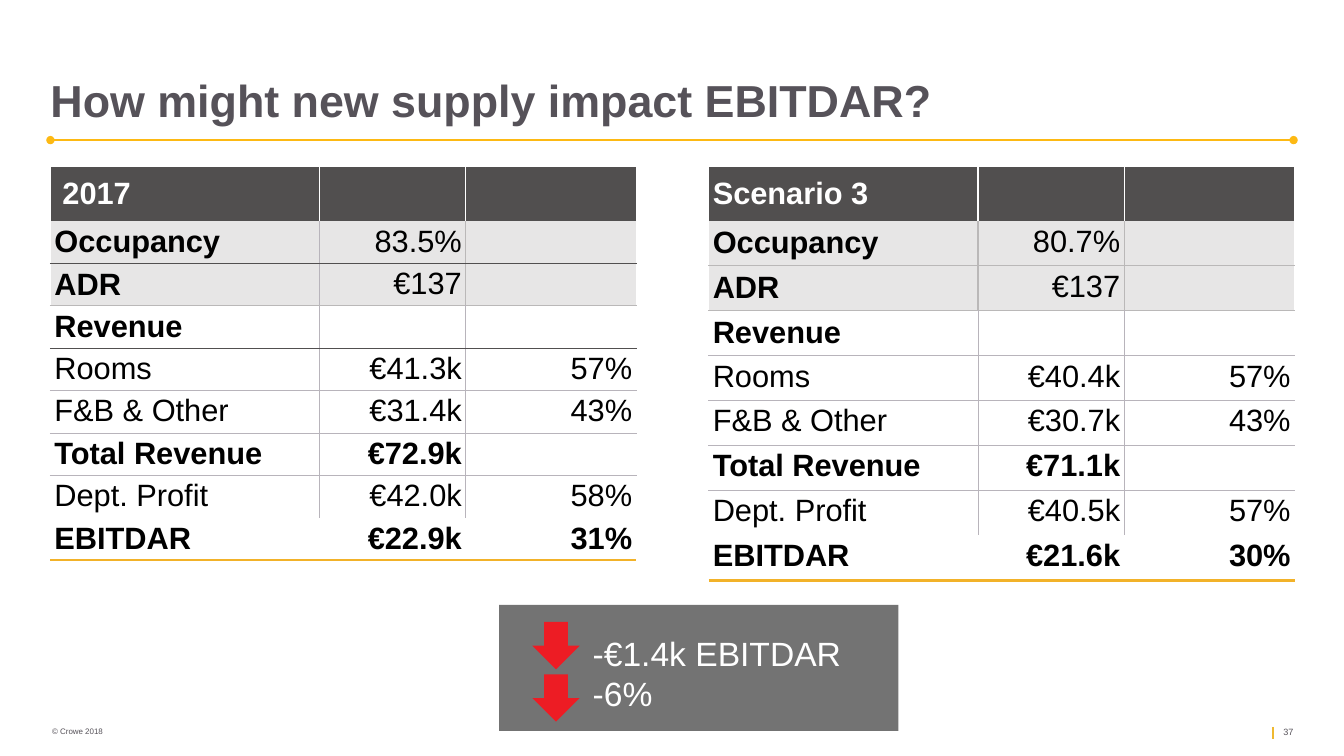
from dataclasses import dataclass

from lxml import etree
from pptx import Presentation
from pptx.dml.color import RGBColor
from pptx.enum.shapes import MSO_CONNECTOR, MSO_SHAPE
from pptx.enum.text import MSO_ANCHOR, MSO_AUTO_SIZE, PP_ALIGN
from pptx.oxml.ns import qn
from pptx.util import Inches, Pt

TITLE = "How might new supply impact EBITDAR?"
LABELS = ["Occupancy", "ADR", "Revenue", "Rooms", "F&B & Other",
          "Total Revenue", "Dept. Profit", "EBITDAR"]
BOLD_LABELS = {"Occupancy", "ADR", "Revenue", "Total Revenue", "EBITDAR"}
BOLD_VALUES = {"Total Revenue", "EBITDAR"}
YEAR_2017 = {
    "heading": "2017", "indent": 0.12, "left": 0.5, "height": 3.91,
    "values": ["83.5%", "€137", "", "€41.3k", "€31.4k", "€72.9k", "€42.0k", "€22.9k"],
    "shares": ["", "", "", "57%", "43%", "", "58%", "31%"],
    "rules": ["none", "dark", "grey", "dark", "pale", "pale", "pale", "none", "amber"],
}
SCENARIO_3 = {
    "heading": "Scenario 3", "indent": 0.04, "left": 7.03, "height": 4.11,
    "values": ["80.7%", "€137", "", "€40.4k", "€30.7k", "€71.1k", "€40.5k", "€21.6k"],
    "shares": ["", "", "", "57%", "43%", "", "57%", "30%"],
    "rules": ["none", "grey", "grey", "pale", "pale", "pale", "pale", "none", "amber"],
}
IMPACT = ["-€1.4k EBITDAR", "-6%"]
COPYRIGHT = "© Crowe 2018"
PAGE = "37"

SLIDE_W, SLIDE_H = 13.33, 7.5
MARGIN = 0.5
TABLE_TOP, HEADER_H = 1.65, 0.54
COLUMNS = [2.67, 1.45, 1.69]
SHADED_ROWS = 2
MIDDLE_ROWS = 3
CELL_PAD_X, CELL_PAD_Y = Inches(0.04), Pt(2.5)
ARROW_SIZE, ARROW_TOP, ARROW_STEP = 0.47, 6.17, 0.52

LEFT, RIGHT = PP_ALIGN.LEFT, PP_ALIGN.RIGHT
TOP, MIDDLE = MSO_ANCHOR.TOP, MSO_ANCHOR.MIDDLE
NO_AUTOFIT = MSO_AUTO_SIZE.NONE
STRAIGHT = MSO_CONNECTOR.STRAIGHT
RECTANGLE, DOWN_ARROW = MSO_SHAPE.RECTANGLE, MSO_SHAPE.DOWN_ARROW


@dataclass(frozen=True)
class Theme:
    font: str = "Arial"
    slate: str = "565259"
    header: str = "514F4F"
    shaded: str = "E7E6E6"
    panel: str = "737373"
    red: str = "ED1C24"
    gold: str = "FDB913"
    tick: str = "EFB931"
    white: str = "FFFFFF"
    black: str = "000000"
    title_size: float = 32
    table_size: float = 22
    impact_size: float = 24
    page_size: float = 6.5
    copyright_size: float = 5.7


THEME = Theme()
BORDERS = {"none": None, "white": (THEME.white, 1), "grey": ("BAB8B8", 1),
           "pale": ("B8B4BB", 0.5), "dark": (THEME.header, 0.25),
           "amber": ("F2B229", 2.25)}


def rgb(value):
    return RGBColor.from_string(value)


def write(paragraph, text, size, color, bold=False):
    run = paragraph.add_run()
    run.text = text
    font = run.font
    font.name, font.size, font.bold = THEME.font, Pt(size), bold
    font.color.rgb = rgb(color)


def add_text(slide, box, lines, size, color, anchor=MIDDLE):
    frame = slide.shapes.add_textbox(*map(Inches, box)).text_frame
    frame.word_wrap = True
    frame.vertical_anchor = anchor
    for index, line in enumerate(lines):
        paragraph = frame.add_paragraph() if index else frame.paragraphs[0]
        write(paragraph, line, size, color)


def add_block(slide, kind, box, color):
    block = slide.shapes.add_shape(kind, *map(Inches, box))
    block.shadow.inherit = False
    block.fill.solid()
    block.fill.fore_color.rgb = rgb(color)
    block.line.fill.background()


def add_rule(slide, start, end, color, width, dotted=False):
    rule = slide.shapes.add_connector(STRAIGHT, *map(Inches, start + end))
    rule.line.color.rgb = rgb(color)
    rule.line.width = Pt(width)
    properties = rule._element.spPr
    if dotted:
        outline = properties.find(qn("a:ln"))
        for tip in ("a:headEnd", "a:tailEnd"):
            etree.SubElement(outline, qn(tip), type="oval")
    etree.SubElement(properties, qn("a:effectLst"))


def set_borders(cell, sides):
    properties = cell._tc.get_or_add_tcPr()
    for side, style in zip("LRTB", sides):
        border = BORDERS[style]
        line = etree.SubElement(properties, qn(f"a:ln{side}"))
        if border is None:
            etree.SubElement(line, qn("a:noFill"))
            continue
        color, width = border
        line.set("w", str(int(Pt(width))))
        fill = etree.SubElement(line, qn("a:solidFill"))
        etree.SubElement(fill, qn("a:srgbClr"), val=color)


def vertical_rules(row, last, data):
    if row == 0:
        return ["white"] * 4
    if row == last:
        return ["none"] * 4
    if row <= SHADED_ROWS:
        first = "pale" if data is YEAR_2017 else "grey"
        return ["white", first, "grey", "white"]
    return ["white", "pale", "pale", "white"]


def add_results(slide, data):
    rows = [(data["heading"], "", "")]
    rows += list(zip(LABELS, data["values"], data["shares"]))
    last = len(rows) - 1
    table = slide.shapes.add_table(
        len(rows), len(COLUMNS), Inches(data["left"]), Inches(TABLE_TOP),
        Inches(sum(COLUMNS)), Inches(data["height"])).table
    table.first_row = table.horz_banding = False
    for column, width in zip(table.columns, COLUMNS):
        column.width = Inches(width)
    horizontal = ["white"] + data["rules"]
    for r, texts in enumerate(rows):
        heading = r == 0
        table.rows[r].height = Inches(
            HEADER_H if heading else (data["height"] - HEADER_H) / last)
        vertical = vertical_rules(r, last, data)
        fill = THEME.header if heading else THEME.shaded if r <= SHADED_ROWS else THEME.white
        for c, text in enumerate(texts):
            cell = table.cell(r, c)
            set_borders(cell, vertical[c:c + 2] + horizontal[r:r + 2])
            cell.fill.solid()
            cell.fill.fore_color.rgb = rgb(fill)
            cell.margin_left = Inches(data["indent"]) if heading else CELL_PAD_X
            cell.margin_right = CELL_PAD_X
            cell.margin_top = cell.margin_bottom = 0 if heading else CELL_PAD_Y
            cell.vertical_anchor = MIDDLE if c == 0 and r <= MIDDLE_ROWS else TOP
            if text:
                paragraph = cell.text_frame.paragraphs[0]
                paragraph.alignment = RIGHT if c else LEFT
                bold = heading or texts[0] in (BOLD_VALUES if c else BOLD_LABELS)
                write(paragraph, text, THEME.table_size,
                      THEME.white if heading else THEME.black, bold)


def add_title(slide):
    title = slide.shapes.title
    title.left, title.top = Inches(MARGIN), Inches(0.76)
    title.width, title.height = Inches(SLIDE_W - 2 * MARGIN), Inches(0.52)
    frame = title.text_frame
    frame.auto_size = NO_AUTOFIT
    frame.vertical_anchor = MIDDLE
    frame.margin_left = frame.margin_right = 0
    paragraph = frame.paragraphs[0]
    paragraph.alignment, paragraph.line_spacing = LEFT, 0.9
    write(paragraph, TITLE, THEME.title_size, THEME.slate, True)


def main():
    deck = Presentation()
    deck.slide_width, deck.slide_height = Inches(SLIDE_W), Inches(SLIDE_H)
    slide = deck.slides.add_slide(deck.slide_layouts[5])
    add_title(slide)
    add_rule(slide, (MARGIN, 1.39), (SLIDE_W - MARGIN, 1.39), THEME.gold, 1, True)
    for data in (YEAR_2017, SCENARIO_3):
        add_results(slide, data)
    add_block(slide, RECTANGLE, (4.95, 6, 3.96, 1.25), THEME.panel)
    for index in range(len(IMPACT)):
        add_block(slide, DOWN_ARROW, (5.28, ARROW_TOP + index * ARROW_STEP,
                                      ARROW_SIZE, ARROW_SIZE), THEME.red)
    add_text(slide, (5.78, 6.23, 3.09, 0.91), IMPACT, THEME.impact_size, THEME.white, TOP)
    add_text(slide, (0.42, 7.16, 2.64, 0.2), [COPYRIGHT], THEME.copyright_size, THEME.slate)
    add_rule(slide, (12.63, 7.21), (12.63, 7.33), THEME.tick, 1.5)
    add_text(slide, (12.63, 7.16, 0.66, 0.21), [PAGE], THEME.page_size, THEME.slate)
    deck.save("out.pptx")


if __name__ == "__main__":
    main()
